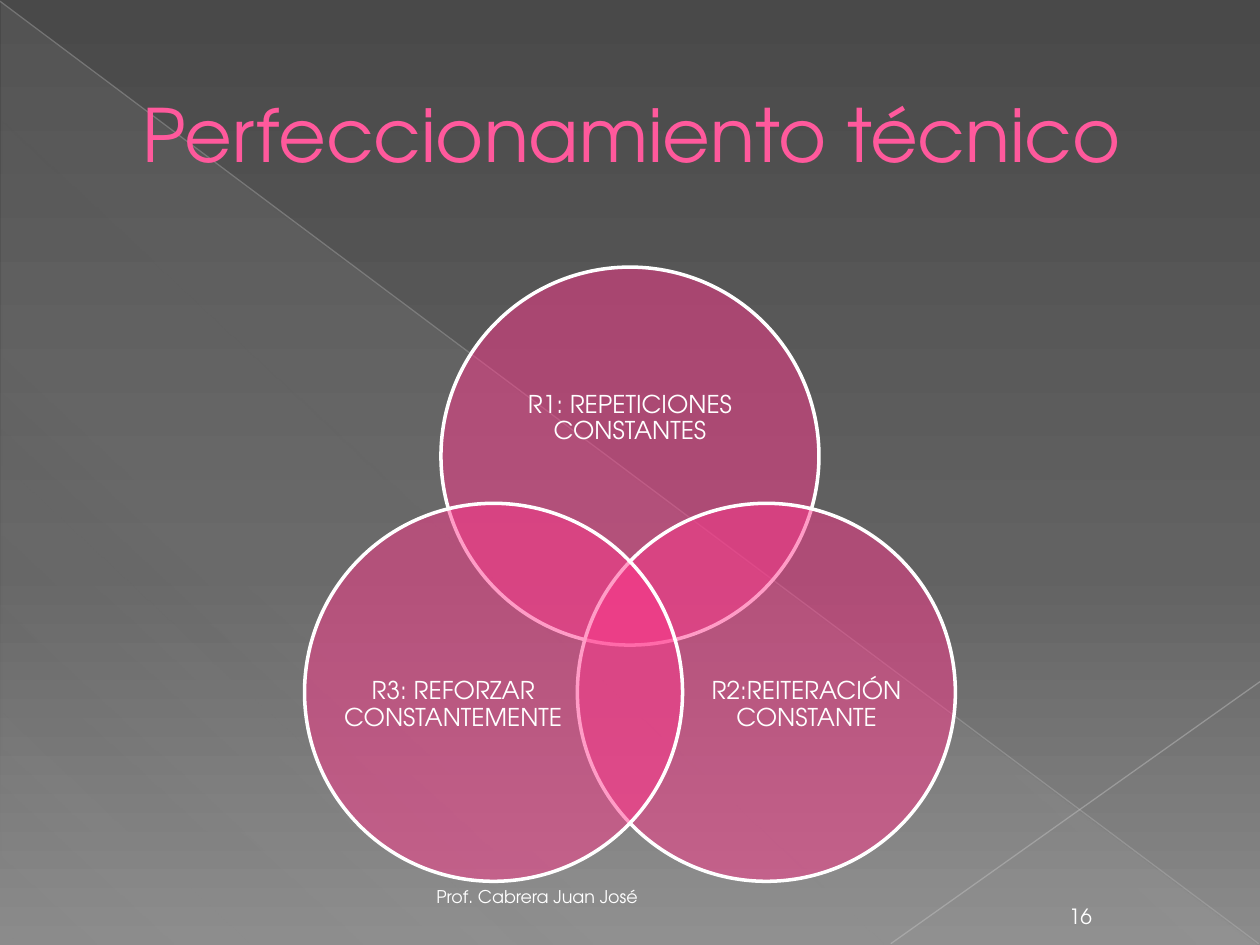
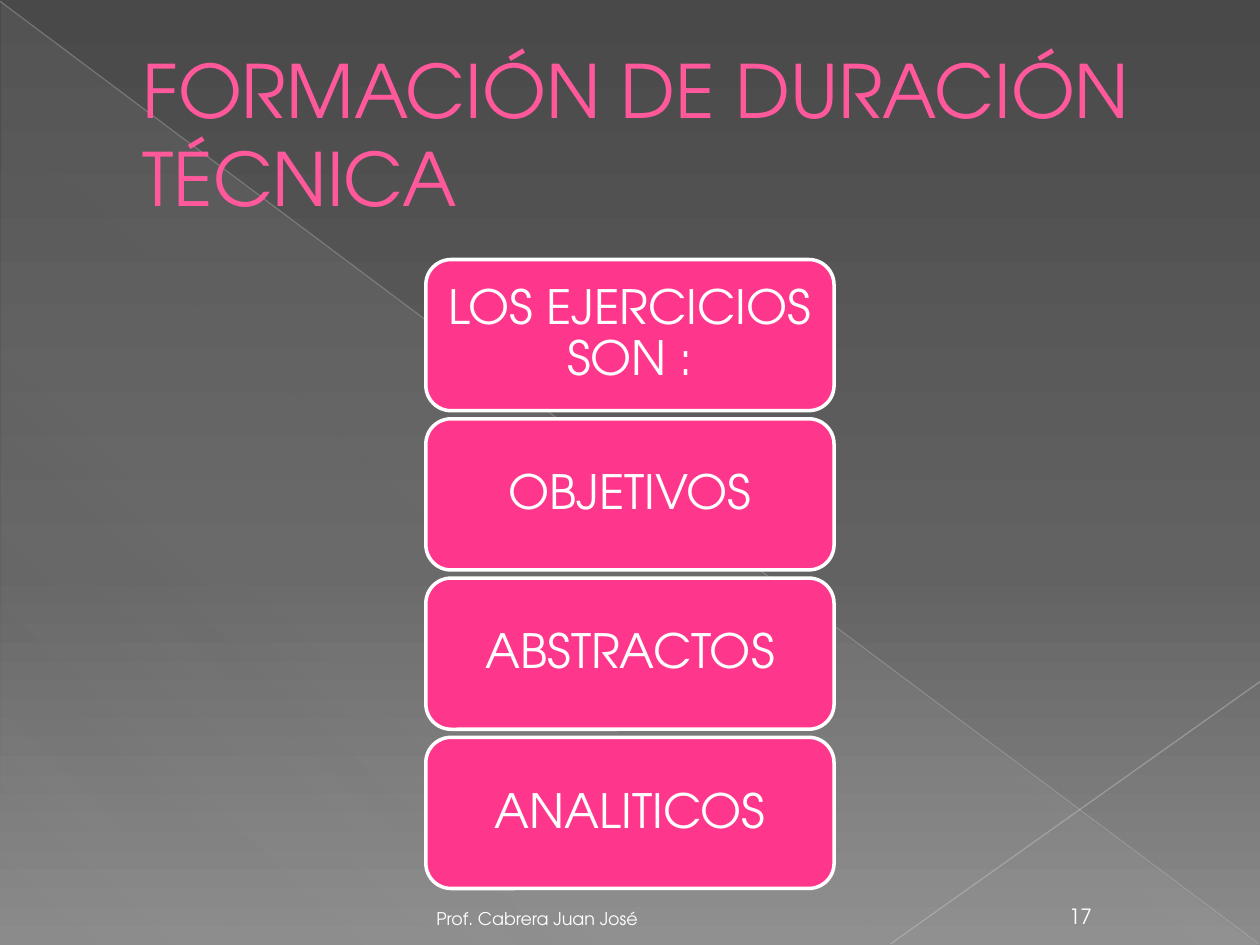
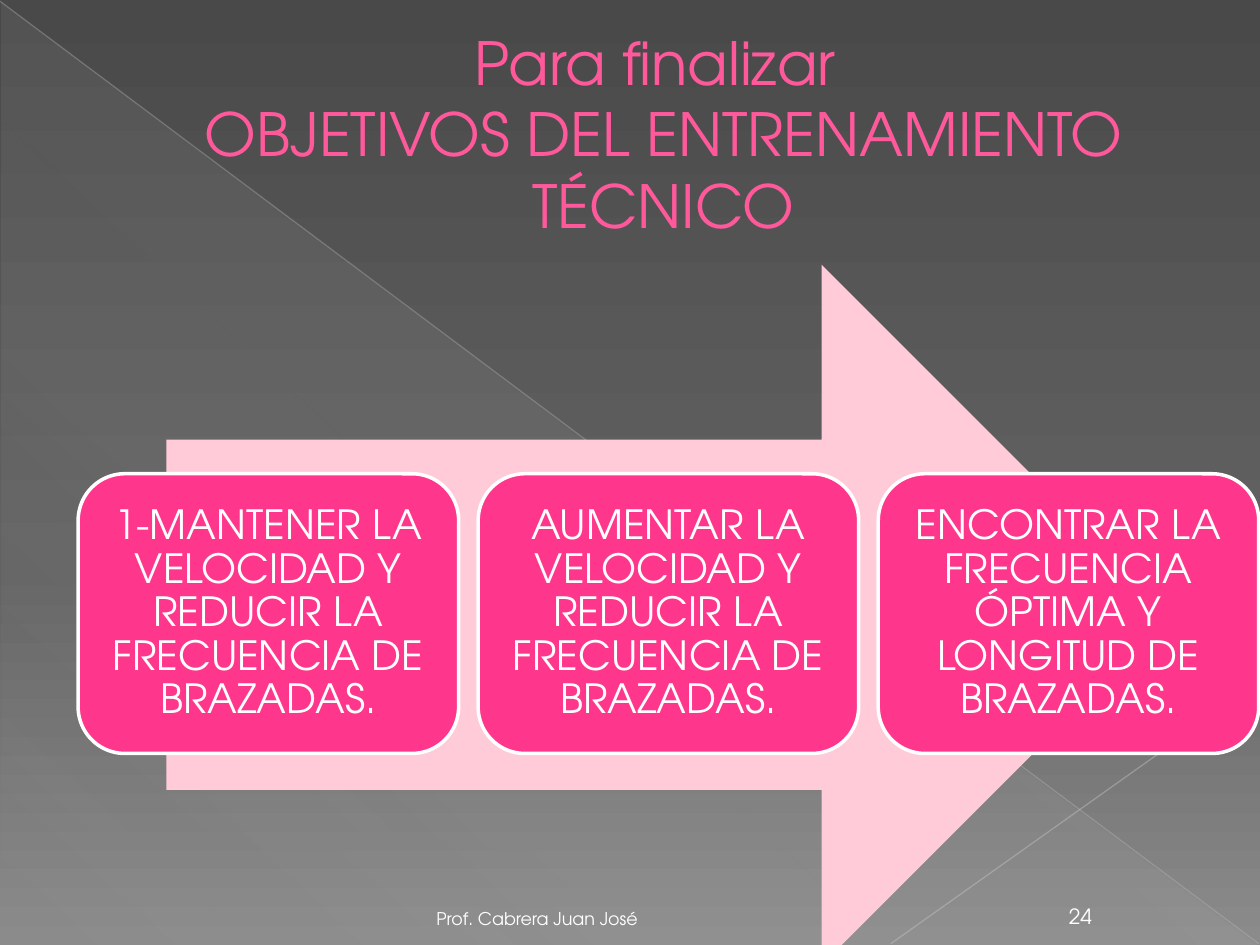
from dataclasses import dataclass
from math import cos, radians, sin

from lxml.etree import SubElement
from pptx import Presentation
from pptx.dml.color import RGBColor
from pptx.enum.shapes import MSO_CONNECTOR, MSO_SHAPE
from pptx.enum.text import MSO_ANCHOR, MSO_AUTO_SIZE, PP_ALIGN
from pptx.oxml.ns import qn
from pptx.util import Inches, Pt

WIDTH, HEIGHT = Inches(10), Inches(7.5)
COLUMNS, ROWS = 100, 75


@dataclass(frozen=True)
class Theme:
    font: str = "TeX Gyre Adventor"
    title: str = "FF599C"
    accent: str = "FF378C"
    pale: str = "FFCBD9"
    light: str = "FFFFFF"
    falling_line: str = "BEBEBE"
    rising_line: str = "C5C5C5"
    backdrop: tuple = ((0, "494949", 100), (60, "626262", 100), (100, "8B8B8B", 100))
    sheen: tuple = ((0, "D2D2D2", 9), (70, "D2D2D2", 7), (100, "D2D2D2", 0))
    title_size: float = 42
    long_title_size: float = 34
    stack_size: float = 27
    goal_size: float = 23
    circle_size: float = 14
    number_size: float = 12
    footer_size: float = 10
    outline: float = 2
    hairline: float = 0.75


THEME = Theme()


def col(count):
    return round(WIDTH * count / COLUMNS)


def row(count):
    return round(HEIGHT * count / ROWS)


def area(left, top, width, height):
    return col(left), row(top), col(width), row(height)


def rgb(value):
    return RGBColor.from_string(value)


def fade(element, percent):
    for color in element.iter(qn("a:srgbClr")):
        SubElement(color, qn("a:alpha")).set("val", str(percent * 1000))


def paint_gradient(owner, fill, stops, angle):
    fill.gradient()
    gradient = next(owner.iter(qn("a:gradFill")))
    gradient.find(qn("a:lin")).set("ang", str(angle * 60000))
    stop_list = gradient.find(qn("a:gsLst"))
    stop_list.clear()
    for position, value, opacity in stops:
        stop = SubElement(stop_list, qn("a:gs"), pos=str(position * 1000))
        color = SubElement(stop, qn("a:srgbClr"), val=value)
        if opacity < 100:
            SubElement(color, qn("a:alpha"), val=str(opacity * 1000))


def write(frame, text, size, color=THEME.light, align=PP_ALIGN.CENTER,
          anchor=MSO_ANCHOR.MIDDLE, insets=(1, 0.5), spacing=None):
    frame.text = text
    frame.word_wrap = True
    frame.auto_size = MSO_AUTO_SIZE.NONE
    frame.vertical_anchor = anchor
    frame.margin_left = frame.margin_right = col(insets[0])
    frame.margin_top = frame.margin_bottom = row(insets[1])
    paragraph = frame.paragraphs[0]
    paragraph.alignment = align
    paragraph.line_spacing = spacing
    paragraph.font.name = THEME.font
    paragraph.font.size = Pt(size)
    paragraph.font.color.rgb = rgb(color)
    return paragraph


def add_label(slide, place, text, size, **style):
    label = slide.shapes.add_textbox(*area(*place))
    write(label.text_frame, text, size, **style)


def add_figure(slide, preset, place, color, opacity=100, outlined=True):
    figure = slide.shapes.add_shape(preset, *area(*place))
    figure.shadow.inherit = False
    figure.fill.solid()
    figure.fill.fore_color.rgb = rgb(color)
    if opacity < 100:
        fade(figure.element, opacity)
    if outlined:
        figure.line.color.rgb = rgb(THEME.light)
        figure.line.width = Pt(THEME.outline)
    else:
        figure.line.fill.background()
    return figure


def add_card(slide, place, text, size, insets):
    card = add_figure(slide, MSO_SHAPE.ROUNDED_RECTANGLE, place, THEME.accent)
    card.adjustments[0] = 0.167
    write(card.text_frame, text, size, insets=insets, spacing=0.9)


def add_hairline(slide, start, end, color, opacity):
    hairline = slide.shapes.add_connector(
        MSO_CONNECTOR.STRAIGHT, col(start[0]), row(start[1]), col(end[0]), row(end[1]))
    hairline.line.color.rgb = rgb(color)
    hairline.line.width = Pt(THEME.hairline)
    fade(hairline.element, opacity)
    SubElement(hairline.element.spPr, qn("a:effectLst"))
    return hairline


def add_sheen(slide):
    sheen = slide.shapes.add_shape(MSO_SHAPE.RIGHT_TRIANGLE, *area(0.1, 0.2, 99.8, 74.8))
    sheen.shadow.inherit = False
    sheen.line.fill.background()
    paint_gradient(sheen.element, sheen.fill, THEME.sheen, 133)
    return sheen


def decorate_layout(layout, slide):
    paint_gradient(layout.element, layout.background.fill, THEME.backdrop, 90)
    decorations = (
        add_sheen(slide),
        add_hairline(slide, (0, 0.1), (99.9, 74.9), THEME.falling_line, 35),
        add_hairline(slide, (100, 54.1), (70.7, 74.9), THEME.rising_line, 44),
    )
    for index, decoration in enumerate(decorations):
        decoration.element.xpath("./*/p:cNvPr")[0].set("id", str(20 + index))
        layout.shapes.element.insert(2 + index, decoration.element)


def set_title(slide, text, size=THEME.title_size, align=PP_ALIGN.LEFT):
    title = slide.shapes.title
    title.left, title.top, title.width, title.height = area(5, 2.9, 90, 15.3)
    heading = write(title.text_frame, text, size, THEME.title, align)
    properties = heading._p.get_or_add_pPr()
    properties.set("marL", str(col(5.3)))
    properties.set("indent", "0")


def add_footer(slide, number, lift=0):
    add_label(slide, (83, 70.9, 5.5, 3.3), number, THEME.number_size, anchor=MSO_ANCHOR.BOTTOM)
    add_label(slide, (5, 70.9 - lift, 46.6, 3.3), "Prof. Cabrera Juan José",
              THEME.footer_size, align=PP_ALIGN.RIGHT, anchor=MSO_ANCHOR.BOTTOM)


def add_venn(slide, circles):
    diameter, reach, hub_x, hub_y = 30, 12.5, 50, 48.7
    for angle, text, shift_x, shift_y, width, height in circles:
        center_x = hub_x + reach * cos(radians(angle))
        center_y = hub_y + reach * sin(radians(angle))
        add_figure(slide, MSO_SHAPE.OVAL,
                   (center_x - diameter / 2, center_y - diameter / 2, diameter, diameter),
                   THEME.accent, opacity=49)
        add_label(slide,
                  (center_x + shift_x - width / 2, center_y + shift_y - height / 2, width, height),
                  text, THEME.circle_size, insets=(0, 0), spacing=0.9)


def add_stack(slide, steps):
    for index, step in enumerate(steps):
        add_card(slide, (33.8, 20.6 + 12.64 * index, 32.4, 12), step,
                 THEME.stack_size, insets=(1.1, 0.6))


def add_goal_arrow(slide, goals):
    add_figure(slide, MSO_SHAPE.RIGHT_ARROW, (13.2, 21, 79.8, 55.6), THEME.pale, outlined=False)
    for index, goal in enumerate(goals):
        add_card(slide, (6.2 + 31.75 * index, 37.6, 30.2, 22.2), goal,
                 THEME.goal_size, insets=(1, 1))


def main():
    deck = Presentation()
    deck.slide_width, deck.slide_height = WIDTH, HEIGHT
    layout = deck.slide_layouts[5]
    refinement, duration, objectives = (deck.slides.add_slide(layout) for _ in range(3))
    decorate_layout(layout, refinement)

    set_title(refinement, "Perfeccionamiento técnico")
    add_venn(refinement, (
        (-90, "R1: REPETICIONES CONSTANTES", 0, -3, 22, 13.5),
        (30, "R2:REITERACIÓN CONSTANTE", 3.2, 1, 18, 16.5),
        (150, "R3: REFORZAR CONSTANTEMENTE", -3.2, 1, 18, 16.5),
    ))
    add_footer(refinement, "16", lift=1.7)

    set_title(duration, "FORMACIÓN DE DURACIÓN TÉCNICA")
    add_stack(duration, ("LOS EJERCICIOS SON :", "OBJETIVOS", "ABSTRACTOS", "ANALITICOS"))
    add_footer(duration, "17")

    set_title(objectives, "Para finalizar \vOBJETIVOS DEL ENTRENAMIENTO TÉCNICO",
              THEME.long_title_size, PP_ALIGN.CENTER)
    add_goal_arrow(objectives, (
        "1-MANTENER LA VELOCIDAD Y REDUCIR LA FRECUENCIA DE BRAZADAS.",
        "AUMENTAR LA VELOCIDAD Y REDUCIR LA FRECUENCIA DE BRAZADAS.",
        "ENCONTRAR LA FRECUENCIA ÓPTIMA Y LONGITUD DE BRAZADAS.",
    ))
    add_footer(objectives, "24")

    deck.save("out.pptx")


if __name__ == "__main__":
    main()
